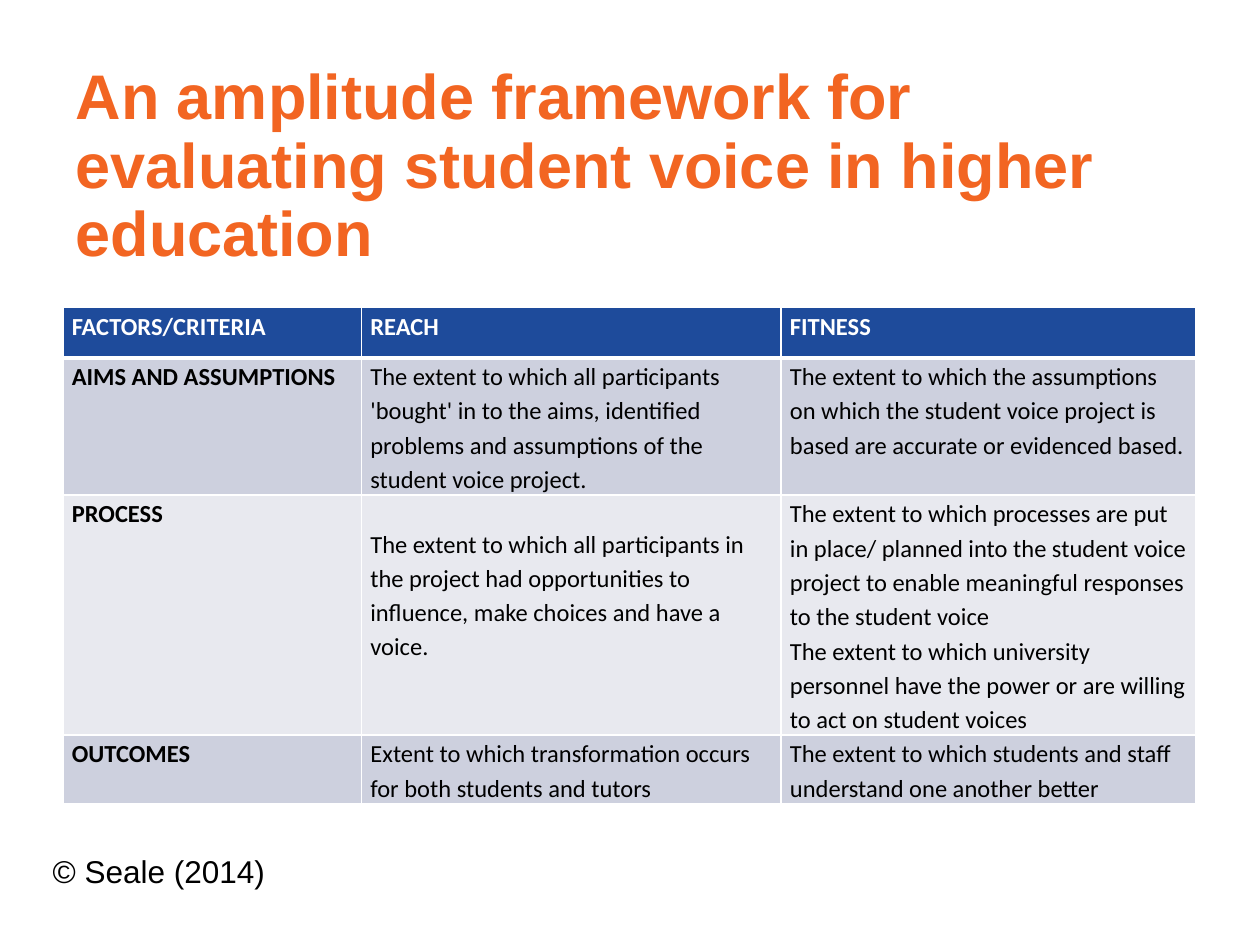
import pptx
import pptx.dml.color
import pptx.enum.text
import pptx.oxml
import pptx.oxml.ns
import pptx.util

Inches = pptx.util.Inches
Pt = pptx.util.Pt

COLUMNS = [2.37, 3.33, 3.29]
ROW_HEIGHTS = [0.4, 1.09, 1.9, 0.54]
ROW_FILLS = ["1E4B9B", "CDD0DE", "E8E9EF", "CDD0DE"]
ROWS = [
    [["FACTORS/CRITERIA"], ["REACH"], ["FITNESS"]],
    [
        ["AIMS AND ASSUMPTIONS"],
        ["The extent to which all participants 'bought' in to the aims, "
         "identified problems and assumptions of the student voice project."],
        ["The extent to which the assumptions on which the student voice "
         "project is based are accurate or evidenced based."],
    ],
    [
        ["PROCESS"],
        ["The extent to which all participants in the project had opportunities "
         "to influence, make choices and have a voice."],
        ["The extent to which processes are put in place/ planned into the student "
         "voice project to enable meaningful responses to the student voice",
         "The extent to which university personnel have the power or are willing "
         "to act on student voices"],
    ],
    [
        ["OUTCOMES"],
        ["Extent to which transformation occurs for both students and tutors"],
        ["The extent to which students and staff understand one another better"],
    ],
]


def color(value):
    return pptx.dml.color.RGBColor.from_string(value)


def add_run(p, text, font, size, fill, bold=False):
    r = p.add_run()
    r.text = text
    r.font.name = font
    r.font.size = Pt(size)
    r.font.bold = bold
    r.font.color.rgb = color(fill)


def place(s, left, top, width, height):
    s.left, s.top = Inches(left), Inches(top)
    s.width, s.height = Inches(width), Inches(height)


def add_title(slide, text):
    s = slide.shapes.title
    place(s, 0.5, 0.47, 9, 1.25)
    tf = s.text_frame
    tf.word_wrap = True
    tf.auto_size = pptx.enum.text.MSO_AUTO_SIZE.NONE
    tf.vertical_anchor = pptx.enum.text.MSO_ANCHOR.TOP
    p = tf.paragraphs[0]
    p.alignment = pptx.enum.text.PP_ALIGN.LEFT
    p.line_spacing = 0.9
    add_run(p, text, "Arial", 36, "F26522", True)


def set_borders(cell, top, bottom):
    tc_pr = cell._tc.get_or_add_tcPr()
    widths = {"lnL": 1, "lnR": 1, "lnT": top, "lnB": bottom}
    for i, (side, width) in enumerate(widths.items()):
        tc_pr.insert(i, pptx.oxml.parse_xml(
            f'<a:{side} {pptx.oxml.ns.nsdecls("a")} w="{Pt(width)}">'
            '<a:solidFill><a:srgbClr val="FFFFFF"/></a:solidFill>'
            f'</a:{side}>'))


def fill_cell(cell, paragraphs, row, col):
    cell.margin_left = cell.margin_right = Inches(0.07)
    cell.margin_top = Inches(0.24 if (row, col) == (2, 1) else 0)
    cell.margin_bottom = Inches(0)
    cell.fill.solid()
    cell.fill.fore_color.rgb = color(ROW_FILLS[row])
    set_borders(cell, 3 if row == 1 else 1, 3 if row == 0 else 1)
    tf = cell.text_frame
    for i, text in enumerate(paragraphs):
        p = tf.add_paragraph() if i else tf.paragraphs[0]
        p.line_spacing = 1.15
        add_run(p, text, "Calibri", 14, "000000" if row else "FFFFFF",
                row == 0 or col == 0)


def add_framework_table(slide):
    table = slide.shapes.add_table(
        len(ROWS), len(COLUMNS), Inches(0.5), Inches(2.44),
        Inches(sum(COLUMNS)), Inches(sum(ROW_HEIGHTS))).table
    table.horz_banding = False
    for column, width in zip(table.columns, COLUMNS):
        column.width = Inches(width)
    for row, texts in enumerate(ROWS):
        table.rows[row].height = Inches(ROW_HEIGHTS[row])
        for col, paragraphs in enumerate(texts):
            fill_cell(table.cell(row, col), paragraphs, row, col)


def add_credit(slide, text):
    s = slide.shapes.add_textbox(
        Inches(0.32), Inches(6.71), Inches(9.18), Inches(0.4))
    tf = s.text_frame
    tf.word_wrap = True
    tf.auto_size = pptx.enum.text.MSO_AUTO_SIZE.SHAPE_TO_FIT_TEXT
    add_run(tf.paragraphs[0], text, "Arial", 18, "000000")


def main():
    prs = pptx.Presentation()
    prs.slide_width, prs.slide_height = Inches(10), Inches(7.5)
    slide = prs.slides.add_slide(prs.slide_layouts[5])
    add_title(slide, "An amplitude framework for evaluating student voice "
                     "in higher education")
    add_framework_table(slide)
    add_credit(slide, "© Seale (2014)")
    prs.save("out.pptx")


if __name__ == "__main__":
    main()
